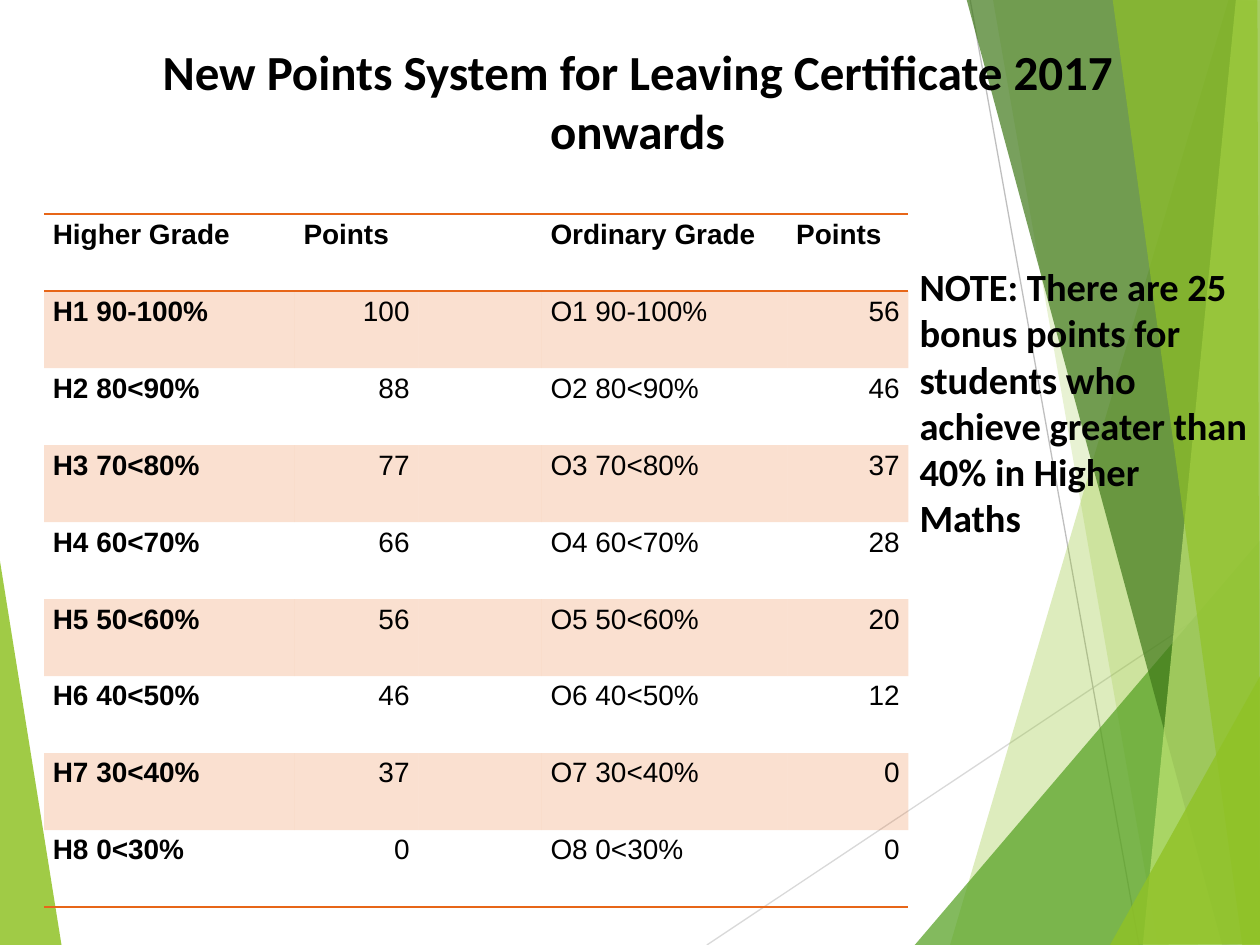
import pptx
import pptx.dml.color
import pptx.enum.shapes
import pptx.enum.text
import pptx.oxml
import pptx.oxml.ns
import pptx.util
import lxml.etree

Inches = pptx.util.Inches
Pt = pptx.util.Pt
RGB = pptx.dml.color.RGBColor.from_string
ALIGN = pptx.enum.text.PP_ALIGN
NS = pptx.oxml.ns.nsdecls("a")
qn = pptx.oxml.ns.qn

THEME = {
    "text": "000000", "accent": "E76618", "band_opacity": 20,
    "green": "90C226", "mid_green": "54A021", "dark_green": "3F7819", "lime": "C0E474",
    "pale_gray": "D9D9D9", "gray": "BFBFBF",
    "heading_font": "Calibri", "table_font": "Arial",
    "heading_size": 28, "note_size": 22, "table_size": 16,
}


def fill_translucent(target, color, opacity):
    target.fill.solid()
    target.fill.fore_color.rgb = RGB(THEME[color])
    color_node = target.fill._xPr.find(qn("a:solidFill"))[0]
    lxml.etree.SubElement(color_node, qn("a:alpha"), val=str(opacity * 1000))


def write(paragraph, text, font, size, bold, align):
    paragraph.alignment = align
    run = paragraph.add_run()
    run.text = text
    style = {"name": THEME[font], "size": Pt(THEME[size]), "bold": bold}
    for attribute, value in style.items():
        setattr(run.font, attribute, value)
    run.font.color.rgb = RGB(THEME["text"])


deck = pptx.Presentation()
deck.slide_width, deck.slide_height = Inches(10), Inches(7.5)
slide = deck.slides.add_slide(deck.slide_layouts[5])
shapes = slide.shapes

# Background: left wedge, thin lines, then the translucent facets on the right
left_wedge = ("green", 85, [(-0.01, 4.39), (0.49, 7.51), (-0.01, 7.5)])
right_facets = [
    ("green", 30, [(9.75, 0), (7.54, 7.5), (10.02, 7.51), (10.01, 0.01)]),
    ("green", 20, [(7.88, -0.01), (9.19, 7.5), (10.01, 7.5), (10.01, -0.01)]),
    ("mid_green", 72, [(7.26, 7.5), (10, 4.29), (10.01, 7.5)]),
    ("dark_green", 70, [(7.67, -0.01), (9.7, 7.5), (10.01, 7.49), (10.01, -0.01)]),
    ("lime", 70, [(9.81, -0.01), (9.07, 7.5), (10.01, 7.5), (10, -0.01)]),
    ("green", 65, [(8.83, -0.01), (9.86, 7.5), (10, 7.5), (9.98, -0.01)]),
    ("green", 80, [(8.81, 7.5), (10.01, 5.35), (10.01, 7.49)]),
]
thin_lines = [
    ("pale_gray", (5.61, 7.5, 10.01, 4.57)),
    ("gray", (7.7, 0, 9.04, 7.5)),
]
for color, ends in thin_lines:
    thin_line = shapes.add_connector(
        pptx.enum.shapes.MSO_CONNECTOR.STRAIGHT, *[Inches(v) for v in ends])
    thin_line.line.color.rgb = RGB(THEME[color])
    thin_line.line.width = Pt(0.75)
    lxml.etree.SubElement(thin_line.element.spPr, qn("a:effectLst"))

for color, opacity, corners in [left_wedge] + right_facets:
    points = [(Inches(x), Inches(y)) for x, y in corners]
    outline = shapes.build_freeform(*points[0])
    outline.add_line_segments(points[1:], close=True)
    facet = outline.convert_to_shape()
    fill_translucent(facet, color, opacity)
    facet.line.fill.background()
    facet.shadow.inherit = False

# Note on bonus points
note = shapes.add_textbox(Inches(7.2), Inches(1.86), Inches(2.8), Inches(3.62)).text_frame
note.word_wrap = True
note.margin_top = Inches(0.23)
write(note.paragraphs[0],
      "NOTE: There are 25 bonus points for students who achieve greater than 40% in Higher Maths",
      "heading_font", "note_size", True, ALIGN.LEFT)

# Points table
headers = ["Higher Grade", "Points", "", "Ordinary Grade", "Points"]
bands = ["90-100%", "80<90%", "70<80%", "60<70%", "50<60%", "40<50%", "30<40%", "0<30%"]
higher_points = [100, 88, 77, 66, 56, 46, 37, 0]
ordinary_points = [56, 46, 37, 28, 20, 12, 0, 0]
rows = [headers] + [
    [f"H{grade} {band}", str(higher), "", f"O{grade} {band}", str(ordinary)]
    for grade, (band, higher, ordinary)
    in enumerate(zip(bands, higher_points, ordinary_points), 1)
]
column_widths = [1.99, 0.98, 0.98, 1.95, 0.96]
points_frame = shapes.add_table(len(rows), len(headers), Inches(0.35), Inches(1.7),
                                Inches(sum(column_widths)), Inches(5.5))
points_table = points_frame.table
points_table.horz_banding = False
style_id = points_frame.element.find(".//" + qn("a:tableStyleId"))
style_id.text = "{2D5ABB26-0587-4C30-8999-92F81FD0307C}"  # No style, no grid
for column, width in zip(points_table.columns, column_widths):
    column.width = Inches(width)

ruled_edges = {0: ["lnT", "lnB"], len(rows) - 1: ["lnB"]}
cell_margins = {"margin_left": 0.07, "margin_right": 0.07, "margin_top": 0, "margin_bottom": 0}
for r, row in enumerate(rows):
    for c, text in enumerate(row):
        cell = points_table.cell(r, c)
        for side, inset in cell_margins.items():
            setattr(cell, side, Inches(inset))
        if r % 2:
            fill_translucent(cell, "accent", THEME["band_opacity"])
        else:
            cell.fill.background()
        for position, edge in enumerate(ruled_edges.get(r, [])):
            rule = pptx.oxml.parse_xml(
                f'<a:{edge} {NS} w="{Pt(1)}"><a:solidFill>'
                f'<a:srgbClr val="{THEME["accent"]}"/></a:solidFill></a:{edge}>')
            cell.fill._xPr.insert(position, rule)
        if text:
            entry = cell.text_frame.paragraphs[0]
            entry.line_spacing = 1.15
            entry.space_before, entry.space_after = Pt(7.5), Pt(3.8)
            is_number = r > 0 and c in (1, 4)
            write(entry, text, "table_font", "table_size", r == 0 or c == 0,
                  ALIGN.RIGHT if is_number else ALIGN.LEFT)

# Heading, brought in front of the background
heading = shapes.title
heading.element.getparent().append(heading.element)
heading_place = {"left": 0.49, "top": 0.28, "width": 9.14, "height": 1.04}
for attribute, length in heading_place.items():
    setattr(heading, attribute, Inches(length))
heading.text_frame.vertical_anchor = pptx.enum.text.MSO_ANCHOR.TOP
heading.text_frame.word_wrap = True
write(heading.text_frame.paragraphs[0],
      "New Points System for Leaving Certificate 2017 onwards",
      "heading_font", "heading_size", True, ALIGN.CENTER)

deck.save("out.pptx")
